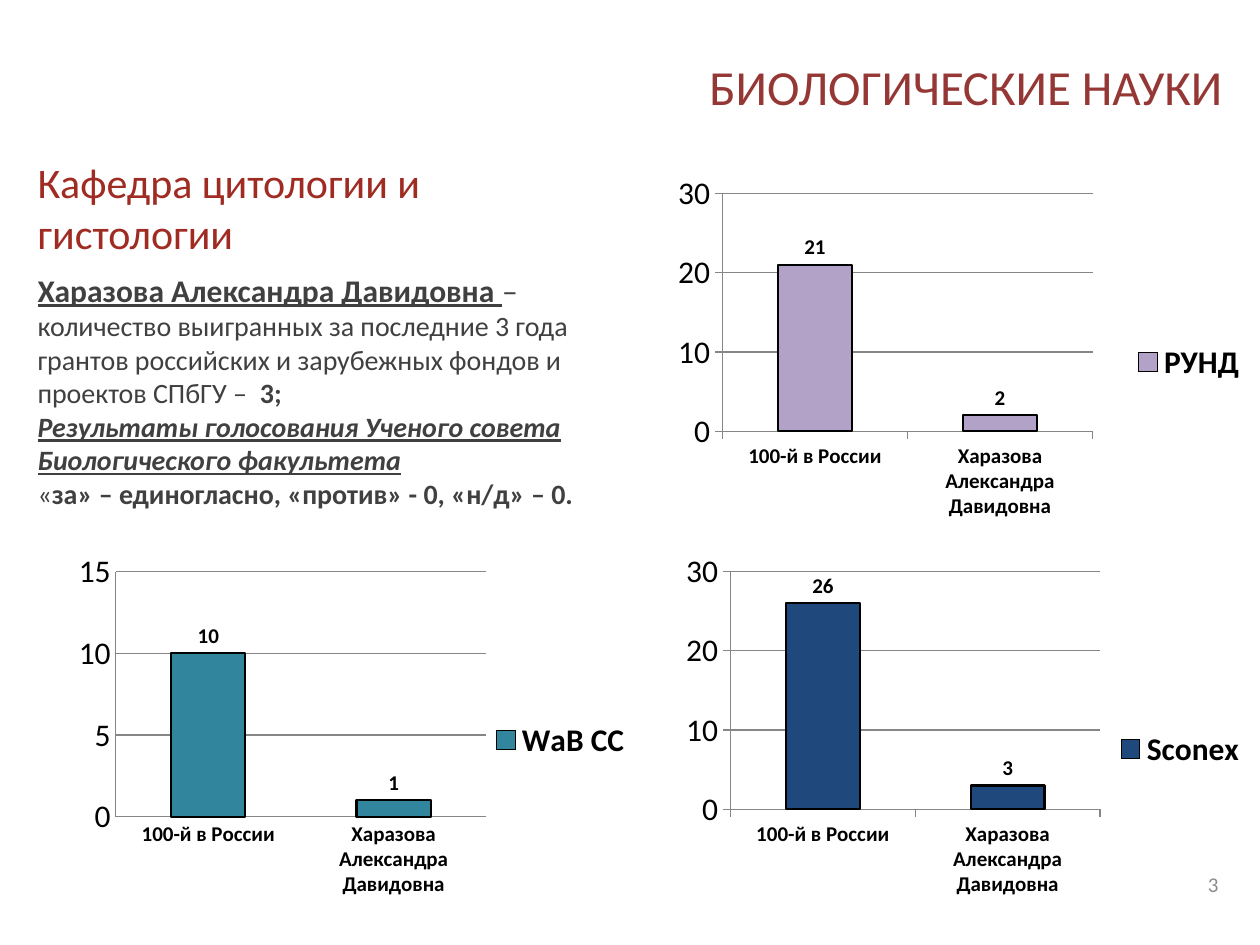
from pptx import Presentation
from pptx.chart.data import CategoryChartData
from pptx.dml.color import RGBColor
from pptx.enum.chart import (XL_CHART_TYPE, XL_LABEL_POSITION,
                             XL_LEGEND_POSITION, XL_TICK_MARK)
from pptx.enum.text import MSO_ANCHOR, PP_ALIGN
from pptx.oxml import parse_xml
from pptx.oxml.ns import nsdecls, qn
from pptx.util import Inches, Pt

COLUMNS = XL_CHART_TYPE.COLUMN_CLUSTERED
OUTSIDE_END = XL_LABEL_POSITION.OUTSIDE_END
LEGEND_RIGHT = XL_LEGEND_POSITION.RIGHT
TICK_OUT, TICK_NONE = XL_TICK_MARK.OUTSIDE, XL_TICK_MARK.NONE
TOP, MIDDLE = MSO_ANCHOR.TOP, MSO_ANCHOR.MIDDLE
LEFT, RIGHT = PP_ALIGN.LEFT, PP_ALIGN.RIGHT

FONT = "Calibri"
BLACK = RGBColor(0x00, 0x00, 0x00)
TITLE_RED = RGBColor(0x95, 0x37, 0x35)
HEADING_RED = RGBColor(0x9F, 0x2B, 0x22)
BODY_GRAY = RGBColor(0x40, 0x40, 0x40)
NUMBER_GRAY = RGBColor(0x8C, 0x8C, 0x8C)
GRID_GRAY = RGBColor(0x86, 0x86, 0x86)
PURPLE = RGBColor(0xB3, 0xA2, 0xC7)
TEAL = RGBColor(0x31, 0x85, 0x9C)
NAVY = RGBColor(0x1F, 0x49, 0x7D)

CANDIDATE = "Харазова Александра Давидовна"
CATEGORIES = ["100-й в России", CANDIDATE]
CHART_WIDTH, CHART_HEIGHT = 4.92, 3.15


def style_font(font, size, color, bold=False, italic=False, underline=False):
    font.name = FONT
    font.size = Pt(size)
    font.color.rgb = color
    font.bold = bold
    font.italic = italic
    font.underline = underline


def place(shape, left, top, width, height):
    shape.left, shape.top = Inches(left), Inches(top)
    shape.width, shape.height = Inches(width), Inches(height)


def fill_text(shape, paragraphs, color, align=LEFT, anchor=MIDDLE):
    """Each paragraph is a list of (text, size, styles) runs."""
    frame = shape.text_frame
    frame.word_wrap = True
    frame.vertical_anchor = anchor
    frame.text = "\n".join("" for _ in paragraphs)
    for paragraph, runs in zip(frame.paragraphs, paragraphs):
        paragraph.alignment = align
        for text, size, styles in runs:
            run = paragraph.add_run()
            run.text = text
            style_font(run.font, size, color, **styles)


def add_text(slide, box, paragraphs, color, **options):
    textbox = slide.shapes.add_textbox(*map(Inches, box))
    fill_text(textbox, paragraphs, color, **options)


def set_plot_area(chart, x, y, w, h):
    plot_area = chart._chartSpace.chart.plotArea
    for layout in plot_area.findall(qn("c:layout")):
        plot_area.remove(layout)
    sizes = "".join(f'<c:{tag} val="{value}"/>'
                    for tag, value in zip("xywh", (x, y, w, h)))
    plot_area.insert(0, parse_xml(
        f'<c:layout {nsdecls("c")}><c:manualLayout>'
        '<c:layoutTarget val="inner"/><c:xMode val="edge"/>'
        f'<c:yMode val="edge"/>{sizes}</c:manualLayout></c:layout>'))


def add_index_chart(slide, left, top, index, values, color, maximum, step,
                    tick, plot_area):
    data = CategoryChartData()
    data.categories = CATEGORIES
    data.add_series(index, values)
    chart = slide.shapes.add_chart(
        COLUMNS, Inches(left), Inches(top), Inches(CHART_WIDTH),
        Inches(CHART_HEIGHT), data).chart
    chart.has_title = False
    style_font(chart.font, 18, BLACK)
    set_plot_area(chart, *plot_area)

    chart.has_legend = True
    chart.legend.position = LEGEND_RIGHT
    chart.legend.include_in_layout = False
    style_font(chart.legend.font, 18, BLACK, bold=True)

    # Axes and gridlines
    value_axis, category_axis = chart.value_axis, chart.category_axis
    value_axis.minimum_scale, value_axis.maximum_scale = 0, maximum
    value_axis.major_unit = step
    value_axis.has_major_gridlines = True
    for axis in (value_axis, category_axis):
        axis.major_tick_mark = tick
        axis.minor_tick_mark = TICK_NONE
        axis.format.line.color.rgb = GRID_GRAY
    value_axis.major_gridlines.format.line.color.rgb = GRID_GRAY
    style_font(category_axis.tick_labels.font, 12, BLACK, bold=True)

    # Columns and value labels
    plot = chart.plots[0]
    plot.gap_width = 150
    plot.vary_by_categories = False
    columns = plot.series[0]
    columns.format.fill.solid()
    columns.format.fill.fore_color.rgb = color
    columns.format.line.color.rgb = BLACK
    columns.format.line.width = Pt(1.25)
    labels = columns.data_labels
    labels.show_value = True
    labels.position = OUTSIDE_END
    style_font(labels.font, 12, BLACK, bold=True)


def main():
    prs = Presentation()
    prs.slide_width, prs.slide_height = Inches(10), Inches(7.5)
    slide = prs.slides.add_slide(prs.slide_layouts[5])

    # Title
    title = slide.shapes.title
    place(title, 2.56, 0.3, 7.24, 0.77)
    fill_text(title, [[("БИОЛОГИЧЕСКИЕ НАУКИ", 28, {})]], TITLE_RED,
              align=RIGHT)

    # Citation index charts
    add_index_chart(slide, 5.08, 4.37, "Sconex", (26, 3), NAVY, 30, 10,
                    TICK_OUT, (0.146, 0.053, 0.596, 0.599))
    add_index_chart(slide, 0.2, 4.3, "WaB CC", (10, 1), TEAL, 15, 5,
                    TICK_NONE, (0.146, 0.075, 0.598, 0.618))
    add_index_chart(slide, 5.08, 1.3, "РУНД", (21, 2), PURPLE, 30, 10,
                    TICK_OUT, (0.133, 0.075, 0.597, 0.599))

    # Department and candidate
    add_text(slide, (0.2, 1.19, 4.25, 0.91),
             [[("Кафедра цитологии и гистологии", 24, {})]], HEADING_RED)
    bold = {"bold": True}
    add_text(slide, (0.2, 2.1, 4.73, 2.32), [
        [(CANDIDATE + " ", 18, {"bold": True, "underline": True}),
         ("– ", 18, {}),
         ("количество выигранных за последние 3 года грантов российских и "
          "зарубежных фондов и проектов СПбГУ – ", 16, {}),
         (" 3;", 16, bold)],
        [("Результаты голосования Ученого совета Биологического факультета",
          16, {"bold": True, "italic": True, "underline": True})],
        [("«", 16, {}),
         ("за» – единогласно, «против» - 0, «н/д» – 0.", 16, bold)],
    ], BODY_GRAY, anchor=TOP)

    # Slide number
    add_text(slide, (7.44, 6.82, 2.33, 0.4), [[("3", 12, {})]], NUMBER_GRAY,
             align=RIGHT)

    prs.save("out.pptx")


if __name__ == "__main__":
    main()
